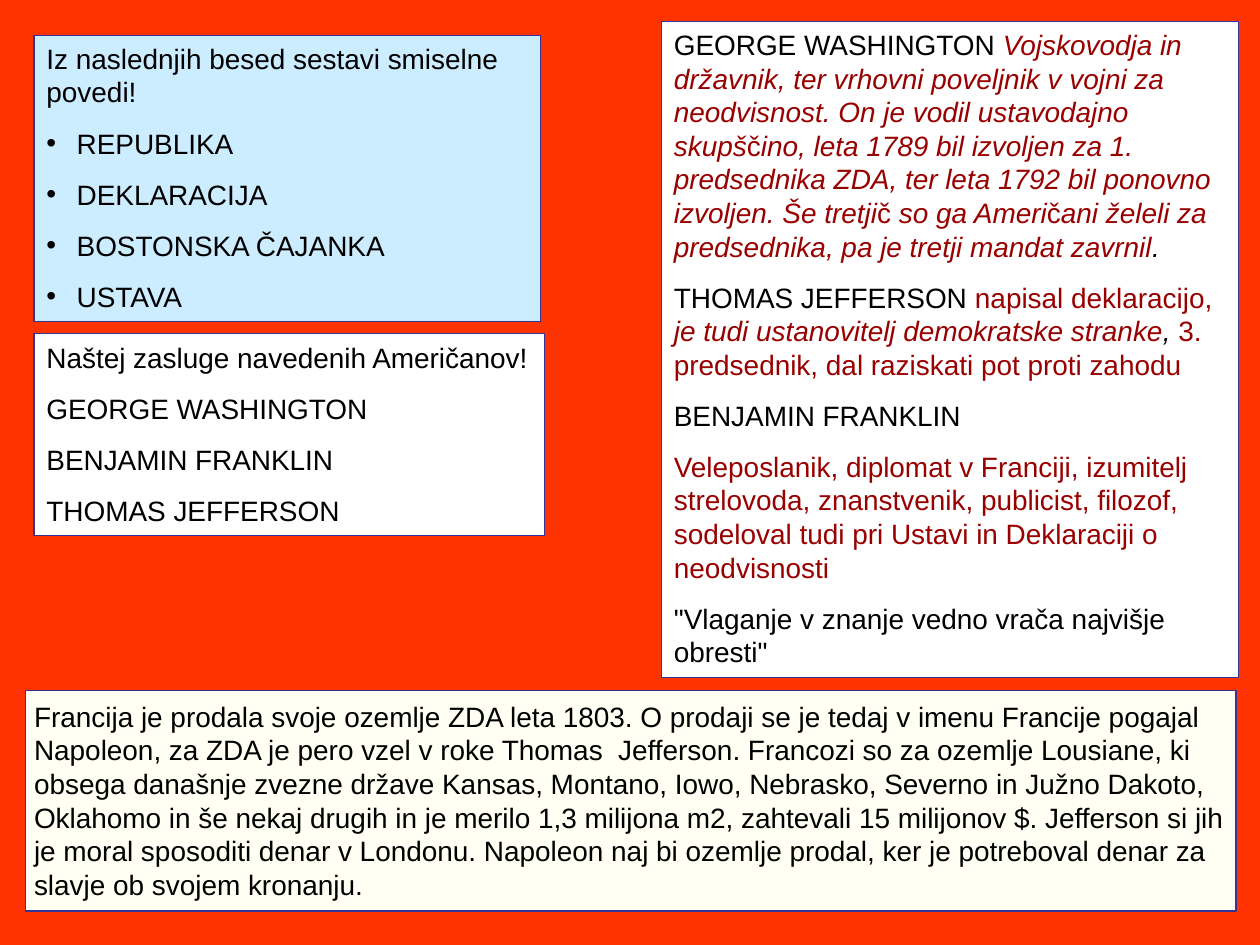
from lxml import etree
from pptx import Presentation
from pptx.dml.color import RGBColor
from pptx.enum import text
from pptx.oxml.ns import qn
from pptx.util import Inches, Pt

BACKGROUND = RGBColor(0xFF, 0x33, 0x00)
BORDER = RGBColor(0x33, 0x33, 0x99)
SKY = RGBColor(0xCC, 0xEC, 0xFF)
WHITE = RGBColor(0xFF, 0xFF, 0xFF)
IVORY = RGBColor(0xFF, 0xFF, 0xF3)
BLACK = RGBColor(0x00, 0x00, 0x00)
ANSWER = RGBColor(0x99, 0x00, 0x00)

# Run styles: colour and italics
PLAIN = (BLACK, False)
SLANTED = (BLACK, True)
RED = (ANSWER, False)
RED_SLANTED = (ANSWER, True)


class Worksheet:
    """Holds the style and the slide; lengths are cells of a 100 x 75 grid."""
    font, size, gap = "Arial", Pt(16), Pt(5)
    columns, rows = 100, 75

    def __init__(self, prs):
        self.cell_w = prs.slide_width / self.columns
        self.cell_h = prs.slide_height / self.rows
        self.slide = prs.slides.add_slide(prs.slide_layouts[6])
        fill = self.slide.background.fill
        fill.solid()
        fill.fore_color.rgb = BACKGROUND

    def box(self, col, row, width, height, fill, wrap=True, inset=None):
        sp = self.slide.shapes.add_textbox(
            round(col * self.cell_w), round(row * self.cell_h),
            round(width * self.cell_w), round(height * self.cell_h))
        sp.fill.solid()
        sp.fill.fore_color.rgb = fill
        sp.line.color.rgb = BORDER
        sp.line.width = Pt(0.75)
        tf = sp.text_frame
        tf.word_wrap = wrap
        tf.auto_size = text.MSO_AUTO_SIZE.SHAPE_TO_FIT_TEXT
        if inset is not None:
            tf.margin_left = tf.margin_right = inset
            tf.margin_top = tf.margin_bottom = inset
        return tf

    def paragraphs(self, tf, items, spaced=True):
        """Each item is a plain string or a list of (words, style) runs."""
        for i, item in enumerate(items):
            p = tf.paragraphs[0] if i == 0 else tf.add_paragraph()
            if spaced:
                p.space_before = p.space_after = self.gap
            runs = [(item, PLAIN)] if isinstance(item, str) else item
            for words, (color, italic) in runs:
                r = p.add_run()
                r.text = words
                r.font.name, r.font.size = self.font, self.size
                r.font.color.rgb, r.font.italic = color, italic

    def bullet(self, p):
        pPr = p._p.get_or_add_pPr()
        indent = Inches(0.24)
        pPr.set("marL", str(indent))
        pPr.set("indent", str(-indent))
        etree.SubElement(pPr, qn("a:buFont"), typeface=self.font)
        etree.SubElement(pPr, qn("a:buChar"), char="•")


def main():
    prs = Presentation()
    prs.slide_width, prs.slide_height = Inches(10), Inches(7.5)
    sheet = Worksheet(prs)

    # Words to build sentences from
    tf = sheet.box(2.7, 2.8, 40.2, 22.7, SKY)
    sheet.paragraphs(tf, [
        "Iz naslednjih besed sestavi smiselne povedi!",
        "REPUBLIKA", "DEKLARACIJA", "BOSTONSKA ČAJANKA", "USTAVA"])
    for p in tf.paragraphs[1:]:
        sheet.bullet(p)

    # Question about the three Americans
    tf = sheet.box(2.7, 26.5, 40.5, 16, WHITE, wrap=False)
    sheet.paragraphs(tf, [
        "Naštej zasluge navedenih Američanov!",
        "GEORGE WASHINGTON", "BENJAMIN FRANKLIN", "THOMAS JEFFERSON"])

    # Answers
    tf = sheet.box(52.5, 1.7, 45.8, 52.1, WHITE)
    sheet.paragraphs(tf, [
        [("GEORGE WASHINGTON ", PLAIN),
         ("Vojskovodja in državnik, ter vrhovni poveljnik v vojni za "
          "neodvisnost. On je vodil ustavodajno skupš", RED_SLANTED),
         ("č", RED),
         ("ino, leta 1789 bil izvoljen za 1. predsednika ZDA, ter leta 1792 "
          "bil ponovno izvoljen. Še tretji", RED_SLANTED),
         ("č ", RED),
         ("so ga Ameri", RED_SLANTED),
         ("č", RED),
         ("ani želeli za predsednika, pa je tretji mandat zavrnil",
          RED_SLANTED),
         (".", SLANTED)],
        [("THOMAS JEFFERSON ", PLAIN),
         ("napisal deklaracijo, ", RED),
         ("je tudi ustanovitelj demokratske stranke", RED_SLANTED),
         (", ", SLANTED),
         ("3. predsednik, dal raziskati pot proti zahodu", RED)],
        "BENJAMIN FRANKLIN",
        [("Veleposlanik, diplomat v Franciji, izumitelj strelovoda, "
          "znanstvenik, publicist, filozof, sodeloval tudi pri Ustavi in "
          "Deklaraciji o neodvisnosti", RED)],
        '"Vlaganje v znanje vedno vrača najvišje obresti"'])

    # Louisiana purchase
    tf = sheet.box(2, 54.8, 96.1, 17.5, IVORY, inset=Inches(0.07))
    sheet.paragraphs(tf, [
        "Francija je prodala svoje ozemlje ZDA leta 1803. O prodaji se je "
        "tedaj v imenu Francije pogajal Napoleon, za ZDA je pero vzel v roke "
        "Thomas  Jefferson. Francozi so za ozemlje Lousiane, ki obsega "
        "današnje zvezne države Kansas, Montano, Iowo, Nebrasko, Severno in "
        "Južno Dakoto, Oklahomo in še nekaj drugih in je merilo 1,3 milijona "
        "m2, zahtevali 15 milijonov $. Jefferson si jih je moral sposoditi "
        "denar v Londonu. Napoleon naj bi ozemlje prodal, ker je potreboval "
        "denar za slavje ob svojem kronanju."], spaced=False)

    prs.save("out.pptx")


if __name__ == "__main__":
    main()
